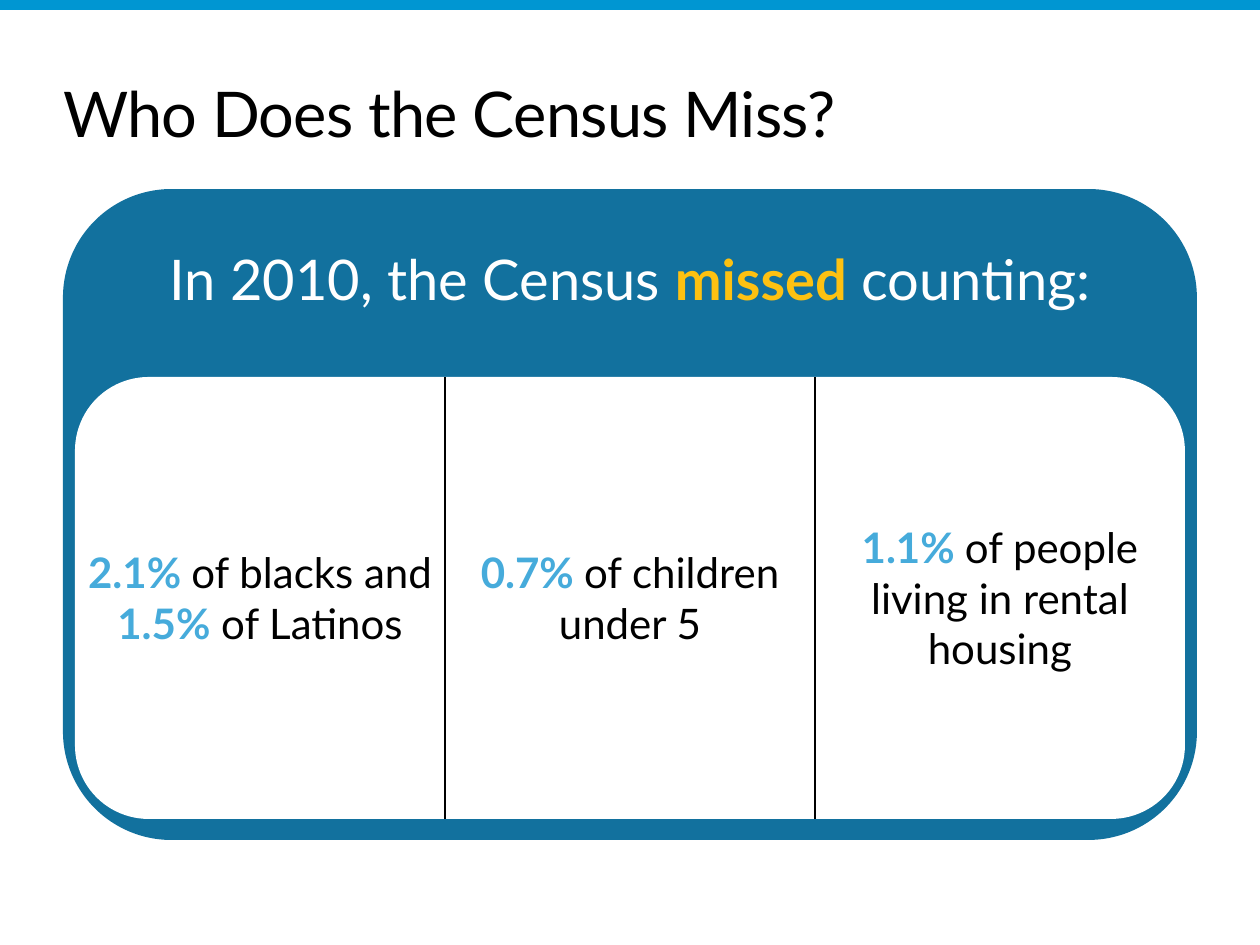
from lxml.etree import SubElement
from pptx import Presentation
from pptx.dml.color import RGBColor
from pptx.enum.shapes import MSO_SHAPE as Shape
from pptx.enum.text import MSO_ANCHOR as Anchor, PP_ALIGN as Align
from pptx.oxml.ns import qn
from pptx.util import Pt

PX = 914400 / 126
FONT = "Lato"
COLORS = {"bar": "0096D2", "panel": "12719E", "white": "FFFFFF", "black": "000000",
          "missed": "FDC111", "figure": "46ABDB"}
NO_STYLE = "{2D5ABB26-0587-4C30-8999-92F81FD0307C}"

# Each cell is a list of (text, is_figure) runs
MISSED_GROUPS = [
    [("2.1% ", True), ("of blacks and ", False), ("1.5%", True), ("\u00a0of Latinos", False)],
    [("0.7% ", True), ("of children under 5", False)],
    [("1.1% ", True), ("of people living in rental housing", False)],
]


def px(*lengths):
    return [round(n * PX) for n in lengths]


def rgb(name):
    return RGBColor.from_string(COLORS[name])


def add_run(p, text, size, color, bold=False):
    r = p.add_run()
    r.text = text
    for key, value in {"name": FONT, "size": Pt(size), "bold": bold}.items():
        setattr(r.font, key, value)
    r.font.color.rgb = rgb(color)
    return r


def add_block(slide, kind, box, color):
    s = slide.shapes.add_shape(kind, *px(*box))
    s.shadow.inherit = False
    s.fill.solid()
    s.fill.fore_color.rgb = rgb(color)
    s.line.fill.background()


def set_border(cell, side, visible):
    ln = SubElement(cell._tc.get_or_add_tcPr(), qn(f"a:ln{side}"), w=str(Pt(1)))
    if visible:
        fill = SubElement(ln, qn("a:solidFill"))
        SubElement(fill, qn("a:srgbClr"), val=COLORS["black"])
    else:
        SubElement(ln, qn("a:noFill"))


def place_title(slide, box, text):
    s = slide.shapes.title
    s.left, s.top, s.width, s.height = px(*box)
    tf = s.text_frame
    for side in ("left", "top", "right", "bottom"):
        setattr(tf, f"margin_{side}", 0)
    tf.vertical_anchor = Anchor.MIDDLE
    p = tf.paragraphs[0]
    p.alignment = Align.LEFT
    r = add_run(p, text, 36, "black")
    r.font._element.set("spc", "-40")


def add_heading(slide, box):
    tf = slide.shapes.add_textbox(*px(*box)).text_frame
    tf.word_wrap = True
    p = tf.paragraphs[0]
    p.alignment = Align.CENTER
    add_run(p, "In 2010, the Census ", 32, "white")
    add_run(p, "missed", 32, "missed", bold=True)
    add_run(p, " counting:", 32, "white")


def add_groups_table(slide, box):
    """White rounded card with one column per undercounted group."""
    add_block(slide, Shape.ROUNDED_RECTANGLE, box, "white")
    count = len(MISSED_GROUPS)
    table = slide.shapes.add_table(1, count, *px(*box)).table
    table.first_row = table.horz_banding = False
    table._tbl.tblPr.find(qn("a:tableStyleId")).text = NO_STYLE
    for i, runs in enumerate(MISSED_GROUPS):
        cell = table.cell(0, i)
        borders = {"L": i > 0, "R": i < count - 1, "T": False, "B": False}
        for side, visible in borders.items():
            set_border(cell, side, visible)
        cell.fill.background()
        cell.vertical_anchor = Anchor.MIDDLE
        p = cell.text_frame.paragraphs[0]
        p.alignment = Align.CENTER
        for text, is_figure in runs:
            add_run(p, text, 24, "figure" if is_figure else "black", is_figure)


def add_panel(slide, box):
    x, y, w, h = box
    add_block(slide, Shape.ROUNDED_RECTANGLE, box, "panel")
    add_heading(slide, (x + 42, y + 49, w - 84, 81))
    add_groups_table(slide, (x + 12, y + 188, w - 24, h - 209))


def main():
    prs = Presentation()
    prs.slide_width, prs.slide_height = px(1260, 945)
    slide = prs.slides.add_slide(prs.slide_layouts[5])
    add_block(slide, Shape.RECTANGLE, (0, 0, 1260, 10), "bar")
    place_title(slide, (63, 73, 1134, 78), "Who Does the Census Miss?")
    add_panel(slide, (63, 189, 1134, 651))
    prs.save("out.pptx")


if __name__ == "__main__":
    main()
